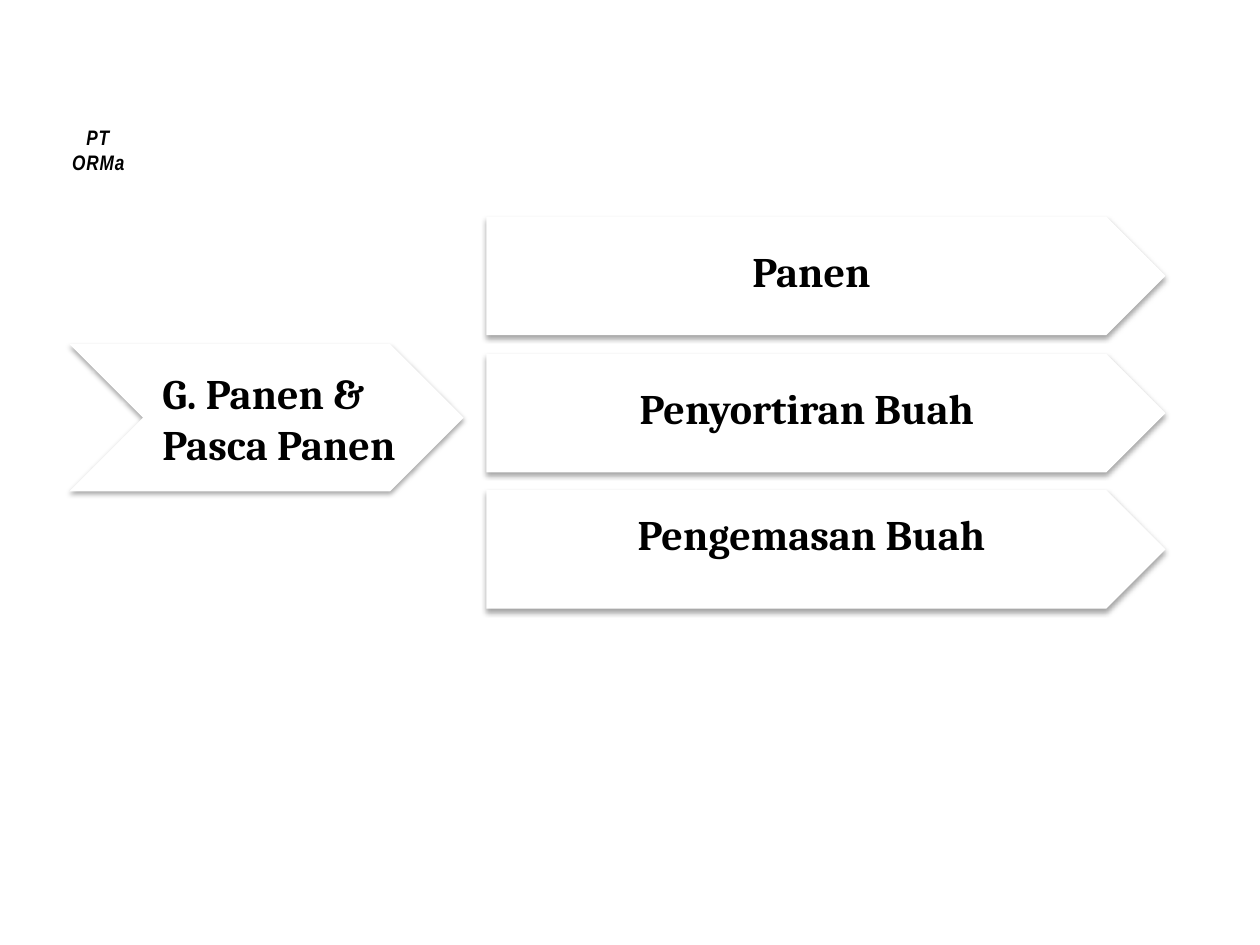
from dataclasses import dataclass

from lxml import etree
from pptx import Presentation
from pptx import util as u
from pptx.dml.color import RGBColor
from pptx.enum import shapes, text
from pptx.oxml import ns


@dataclass
class Theme:
    fill: str = "FFFFFF"
    ink: str = "000000"
    edge: str = "101A26"
    face: str = "Cambria"
    narrow: str = "Arial Narrow"
    head: int = 24
    small: int = 12


def node(root, tag, **attrs):
    kid = etree.SubElement(root, ns.qn(tag))
    for key, val in attrs.items():
        kid.set(key, str(val))
    return kid


def tint(root, rgb, alpha):
    """Add a colour with its opacity in percent."""
    node(node(root, "a:srgbClr", val=rgb), "a:alpha", val=alpha * 1000)


def shade(root, rgb):
    """Add a soft shadow that falls straight down."""
    fx = node(root, "a:effectLst")
    drop = node(fx, "a:outerShdw", blurRad=u.Pt(3.1), dist=u.Pt(1.8),
                dir=90 * 60000, algn="ctr", rotWithShape=0)
    tint(drop, rgb, 35)
    return fx


def write(box, words, font, size, color, align=None, italic=False,
          anchor=text.MSO_ANCHOR.MIDDLE):
    frame = box.text_frame
    frame.word_wrap = True
    frame.vertical_anchor = anchor
    para = frame.paragraphs[0]
    para.alignment = align
    run = para.add_run()
    run.text = words
    run.font.name = font
    run.font.size = u.Pt(size)
    run.font.bold = True
    run.font.italic = italic or None
    run.font.color.rgb = RGBColor.from_string(color)
    return run


class Deck:
    def __init__(self, theme):
        self.theme = theme
        self.prs = Presentation()
        self.prs.slide_width = u.Inches(10)
        self.prs.slide_height = u.Inches(7.5)
        self.slide = self.prs.slides.add_slide(self.prs.slide_layouts[6])

    def arrow(self, kind, words, area, label, align=None):
        """Group a block arrow with the text box laid over it."""
        t = self.theme
        group = self.slide.shapes.add_group_shape()
        block = group.shapes.add_shape(kind, *map(u.Inches, area))
        block.fill.solid()
        block.fill.fore_color.rgb = RGBColor.from_string(t.fill)
        block.line.fill.background()
        shade(block._element.spPr, t.ink)
        box = group.shapes.add_textbox(*map(u.Inches, label))
        write(box, words, t.face, t.head, t.ink, align)

    def badge(self, words, area):
        t = self.theme
        box = self.slide.shapes.add_textbox(*map(u.Inches, area))
        run = write(box, words, t.narrow, t.small, t.ink,
                    text.PP_ALIGN.CENTER, True, text.MSO_ANCHOR.TOP)
        box.text_frame.auto_size = text.MSO_AUTO_SIZE.SHAPE_TO_FIT_TEXT
        props = run.font._element
        props.set("spc", "50")
        line = node(props, "a:ln", w=u.Pt(1.06))
        tint(node(line, "a:solidFill"), t.edge, 6)
        props.insert(0, line)
        props.insert(2, shade(props, t.ink))


def main():
    deck = Deck(Theme())
    kind = shapes.MSO_SHAPE
    deck.arrow(kind.CHEVRON, "G. Panen & Pasca Panen",
               (0.55, 2.73, 3.13, 1.17), (1.19, 2.97, 2.22, 0.7))
    steps = [("Panen", 1.72, 1.72), ("Penyortiran Buah ", 2.81, 2.81),
             ("Pengemasan Buah", 3.89, 3.81)]
    for words, top, label in steps:
        deck.arrow(kind.PENTAGON, words, (3.86, top, 5.39, 0.94),
                   (3.86, label, 5.16, 0.86), text.PP_ALIGN.CENTER)
    deck.badge("PT ORMa", (0.39, 0.94, 0.78, 0.3))
    deck.prs.save("out.pptx")


if __name__ == "__main__":
    main()
